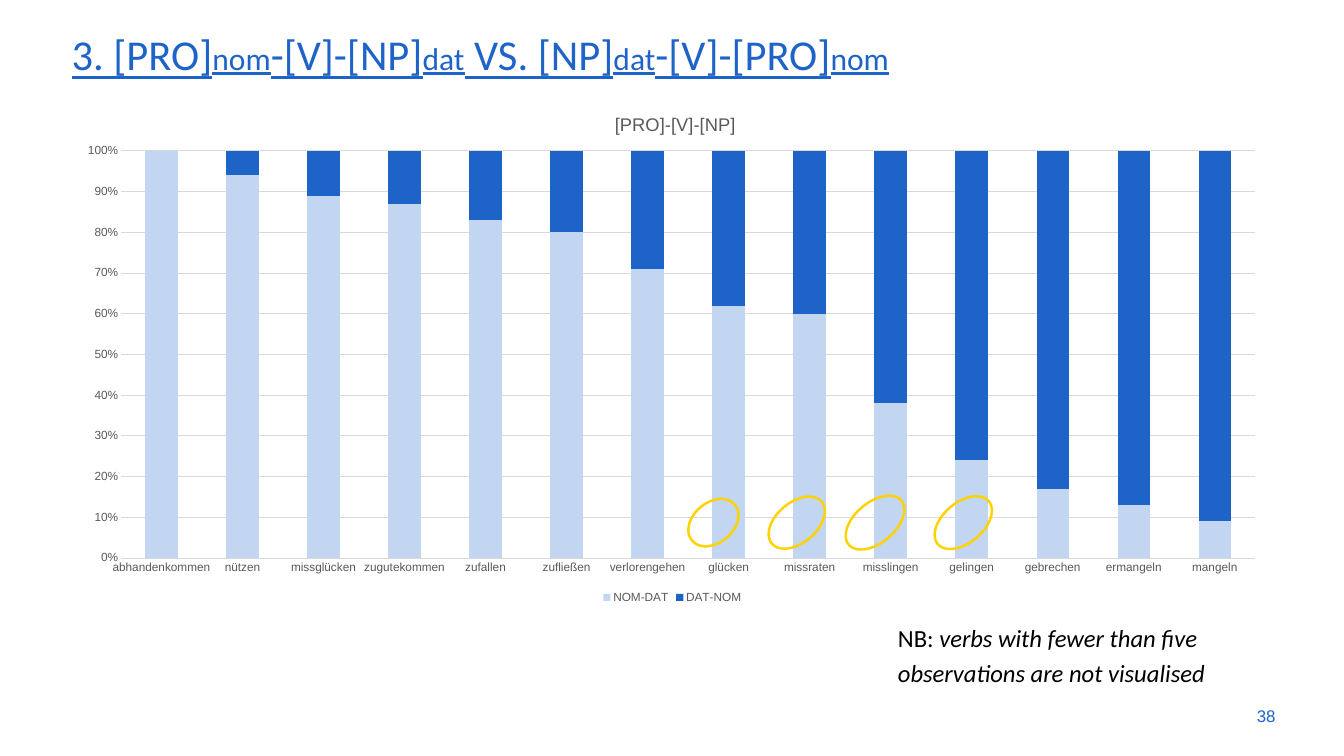
import pptx
import pptx.chart.data
import pptx.dml.color
import pptx.enum.chart
import pptx.enum.shapes
import pptx.enum.text
import pptx.oxml
import pptx.oxml.ns
import pptx.util
from collections import namedtuple

Pt = pptx.util.Pt
Box = namedtuple("Box", "left top width height")

BLUE, PALE_BLUE, YELLOW = "1E64C8", "C2D5F1", "FFD200"
GREY, GRID_GREY, BLACK = "595959", "D9D9D9", "000000"

TITLE_BOX = Box(65.5, 20.2, 1237, 67.7)
CHART_BOX = Box(64.8, 89.3, 1236.2, 527)
NOTE_BOX = Box(905, 623.5, 397.4, 76.3)
NUMBER_BOX = Box(1229.8, 707, 72.7, 41)

TITLE_SPANS = ["3. [pro]", "nom", "-[v]-[np]", "dat", " vs. [np]", "dat", "-[v]-[pro]", "nom"]
NOM_DAT_SHARES = {
    "abhandenkommen": 100, "nützen": 94, "missglücken": 89, "zugutekommen": 87,
    "zufallen": 83, "zufließen": 80, "verlorengehen": 71, "glücken": 62,
    "missraten": 60, "misslingen": 38, "gelingen": 24, "gebrechen": 17,
    "ermangeln": 13, "mangeln": 9,
}
# Left offset and width of each ring within the chart box
RINGS = [(631.4, 56.9), (711.4, 66.2), (789.1, 69.8), (879.8, 67.7)]


def colour(hex_string):
    return pptx.dml.color.RGBColor.from_string(hex_string)


def lengths(box):
    return [Pt(value) for value in box]


def style(font, name, size, hex_string):
    font.name, font.size = name, Pt(size)
    font.color.rgb = colour(hex_string)


def add_title(page, box):
    title = page.shapes.title
    title.left, title.top, title.width, title.height = lengths(box)
    frame = title.text_frame
    frame.auto_size = pptx.enum.text.MSO_AUTO_SIZE.NONE
    frame.vertical_anchor = pptx.enum.text.MSO_ANCHOR.MIDDLE
    para = frame.paragraphs[0]
    para.alignment = pptx.enum.text.PP_ALIGN.LEFT
    para.line_spacing = 0.9
    style(para.font, "Calibri", 54, BLUE)
    para.font.underline = True
    for index, text in enumerate(TITLE_SPANS):
        span = para.add_run()
        span.text = text
        if index % 2:
            span.font.size = Pt(32)
        else:
            span.font._element.set("cap", "small")


def set_layout(parent, **places):
    """Give a chart title or plot area a fixed place, in fractions of the chart."""
    for old in parent.findall(pptx.oxml.ns.qn("c:layout")):
        parent.remove(old)
    target = '<c:layoutTarget val="inner"/>' if "w" in places else ""
    modes = "".join(f'<c:{key}Mode val="edge"/>' for key in places if key in "xy")
    values = "".join(f'<c:{key} val="{value}"/>' for key, value in places.items())
    layout = pptx.oxml.parse_xml(
        f'<c:layout {pptx.oxml.ns.nsdecls("c")}><c:manualLayout>'
        f"{target}{modes}{values}</c:manualLayout></c:layout>")
    text = parent.find(pptx.oxml.ns.qn("c:tx"))
    parent.insert(0 if text is None else 1, layout)


def style_axis(axis):
    axis.major_tick_mark = pptx.enum.chart.XL_TICK_MARK.NONE
    axis.minor_tick_mark = pptx.enum.chart.XL_TICK_MARK.NONE
    style(axis.tick_labels.font, "Arial", 12, GREY)


def style_line(line):
    line.color.rgb = colour(GRID_GREY)
    line.width = Pt(0.75)


def add_verb_chart(page, box):
    data = pptx.chart.data.CategoryChartData()
    data.categories = list(NOM_DAT_SHARES)
    data.add_series("NOM-DAT", list(NOM_DAT_SHARES.values()))
    data.add_series("DAT-NOM", [100 - share for share in NOM_DAT_SHARES.values()])
    kind = pptx.enum.chart.XL_CHART_TYPE.COLUMN_STACKED_100
    chart = page.shapes.add_chart(kind, *lengths(box), data).chart
    style(chart.font, "Arial", 10, BLACK)

    # Heading and plot area
    chart.has_title = True
    heading = chart.chart_title.text_frame
    heading.text = "[PRO]-[V]-[NP]"
    style(heading.paragraphs[0].font, "Arial", 18.6, GREY)
    heading.paragraphs[0].font.bold = False
    set_layout(chart.chart_title._element, x=0.45, y=0.04)
    set_layout(chart._chartSpace.chart.plotArea, x=0.047, y=0.1215, w=0.932, h=0.785)

    # Columns
    plot = chart.plots[0]
    plot.gap_width, plot.overlap = 150, 100
    plot.vary_by_categories = False
    for series, fill in zip(plot.series, (PALE_BLUE, BLUE)):
        series.format.fill.solid()
        series.format.fill.fore_color.rgb = colour(fill)

    # Axes
    verbs, shares = chart.category_axis, chart.value_axis
    style_axis(verbs)
    style_line(verbs.format.line)
    verbs._element.find(pptx.oxml.ns.qn("c:txPr"))[0].set("rot", "-60000000")
    style_axis(shares)
    shares.format.line.fill.background()
    style_line(shares.major_gridlines.format.line)
    shares.tick_labels.number_format = "0%"
    shares.tick_labels.number_format_is_linked = False
    shares.major_unit = 0.1

    # Legend
    chart.has_legend = True
    chart.legend.position = pptx.enum.chart.XL_LEGEND_POSITION.BOTTOM
    chart.legend.include_in_layout = False
    style(chart.legend.font, "Arial", 12, GREY)


def add_rings(page, box):
    for offset, width in RINGS:
        place = Box(box.left + offset, box.top + 421.3, width, 41)
        ring = page.shapes.add_shape(pptx.enum.shapes.MSO_SHAPE.OVAL, *lengths(place))
        ring.rotation = 320
        ring.shadow.inherit = False
        ring.fill.background()
        ring.line.color.rgb = colour(YELLOW)
        ring.line.width = Pt(2.5)


def add_text(page, box):
    frame = page.shapes.add_textbox(*lengths(box)).text_frame
    frame.word_wrap = True
    return frame, frame.paragraphs[0]


def add_note(page, box):
    frame, para = add_text(page, box)
    para.line_spacing = 1.2
    style(para.font, "Calibri", 25, BLACK)
    para.add_run().text = "NB: "
    span = para.add_run()
    span.text = "verbs with fewer than five observations are not visualised"
    span.font.italic = True


def add_page_number(page, box):
    frame, para = add_text(page, box)
    frame.vertical_anchor = pptx.enum.text.MSO_ANCHOR.MIDDLE
    para.alignment = pptx.enum.text.PP_ALIGN.RIGHT
    style(para.font, "Arial", 17.1, BLUE)
    para.add_run().text = "38"


def main():
    deck = pptx.Presentation()
    deck.slide_width, deck.slide_height = Pt(1365.12), Pt(768.24)
    page = deck.slides.add_slide(deck.slide_layouts.get_by_name("Title Only"))
    add_title(page, TITLE_BOX)
    add_verb_chart(page, CHART_BOX)
    add_page_number(page, NUMBER_BOX)
    add_note(page, NOTE_BOX)
    add_rings(page, CHART_BOX)
    deck.save("out.pptx")


if __name__ == "__main__":
    main()
